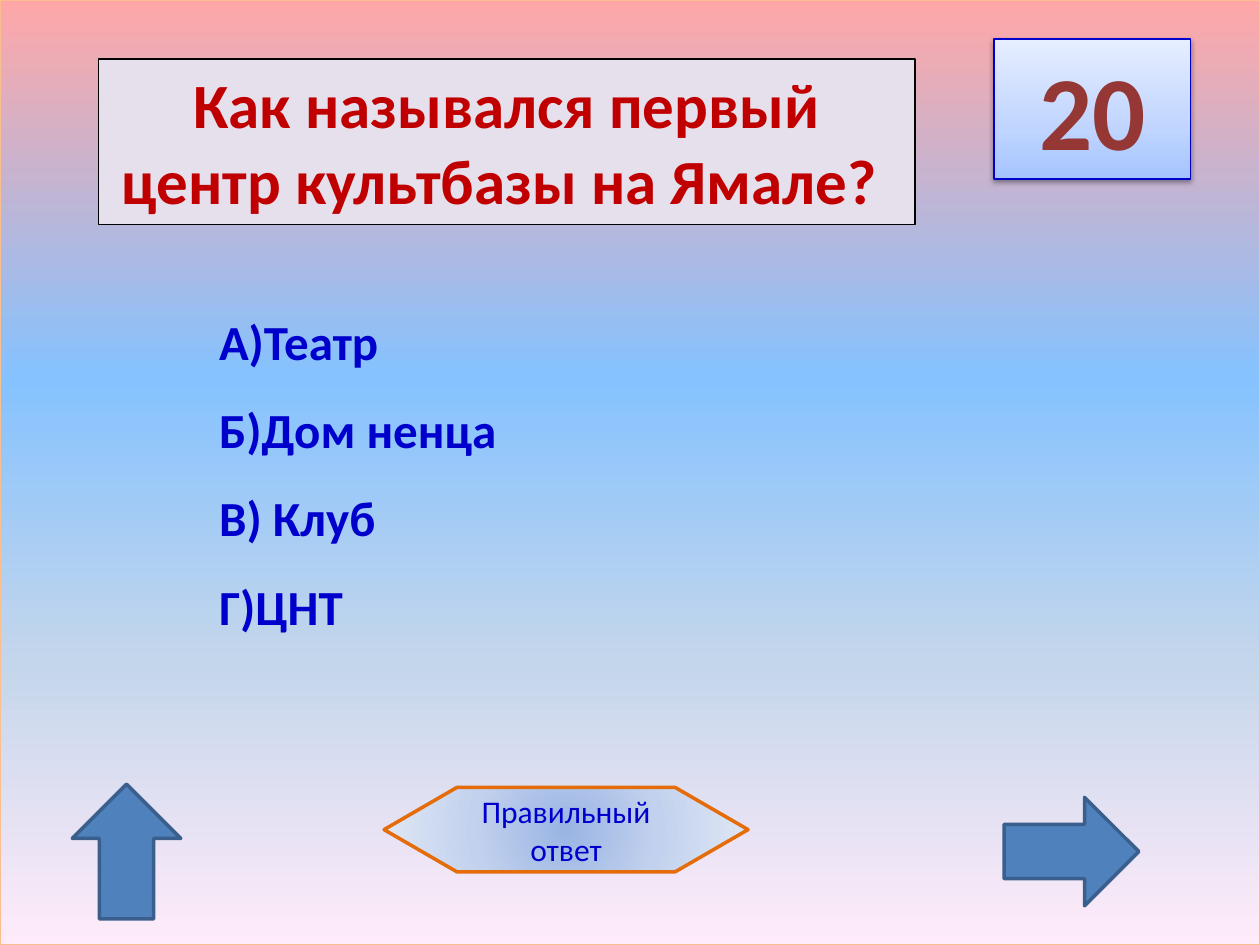
"""Build a quiz slide with a question, four answers and navigation shapes."""
from dataclasses import dataclass
from typing import NamedTuple, Optional

from pptx import Presentation
from pptx.dml.color import RGBColor
from pptx.enum.shapes import MSO_SHAPE
from pptx.enum.text import MSO_ANCHOR, MSO_AUTO_SIZE, PP_ALIGN
from pptx.oxml import parse_xml
from pptx.oxml.ns import nsdecls, qn
from pptx.util import Pt

RECT = MSO_SHAPE.RECTANGLE
ARROW = MSO_SHAPE.RIGHT_ARROW
PREP = MSO_SHAPE.FLOWCHART_PREPARATION
TOP, MIDDLE = MSO_ANCHOR.TOP, MSO_ANCHOR.MIDDLE
LEFT, CENTER = PP_ALIGN.LEFT, PP_ALIGN.CENTER
FIT, FIXED = MSO_AUTO_SIZE.SHAPE_TO_FIT_TEXT, MSO_AUTO_SIZE.NONE
NS = nsdecls("a")


class Box(NamedTuple):
    x: float
    y: float
    w: float
    h: float


class Grad(NamedTuple):
    stops: tuple
    angle: Optional[int] = None


class Shade(NamedTuple):
    color: str
    alpha: int
    blur: float
    dist: float
    angle: int


@dataclass(frozen=True)
class Theme:
    font: str = "Calibri"
    blue: str = "0000CC"
    red: str = "C00000"
    brown: str = "953735"
    violet: str = "5E457C"
    black: str = "000000"
    lilac: str = "E6E0EC"
    arrow: str = "4F81BD"
    edge: str = "3A5F8C"
    orange: str = "E46C0A"
    peach: str = "FABF8F"
    score: int = 60
    title: int = 36
    body: int = 28
    label: int = 18
    sky: tuple = ((40, "85C2FF"), (70, "C4D6EB"), (100, "FFEBFA"))
    badge: Grad = Grad(((0, "A4C4FF"), (35, "BFD4FF"), (100, "E6EEFF")), 270)
    glow: Grad = Grad(((0, "9AB5E4"), (50, "C2D1ED"), (100, "E1E8F5")))


@dataclass(frozen=True)
class Item:
    kind: int
    box: Box
    fill: object
    line: str
    width: float
    turn: int = 0
    shade: Optional[Shade] = None


@dataclass(frozen=True)
class Style:
    size: int
    color: str
    bold: bool = True
    align: int = CENTER
    anchor: int = TOP
    fit: int = FIT
    wrap: bool = True
    space: float = 1.0


THEME = Theme()


def blend(fill, root, grad: Grad) -> None:
    """Give a fill all the stops of a gradient."""
    fill.gradient()
    node = root.find(".//" + qn("a:gradFill"))
    node.clear()
    stops = "".join(f'<a:gs pos="{pos * 1000}"><a:srgbClr val="{color}"/></a:gs>'
                    for pos, color in grad.stops)
    node.append(parse_xml(f"<a:gsLst {NS}>{stops}</a:gsLst>"))
    if grad.angle is None:
        node.append(parse_xml(
            f'<a:path {NS} path="circle"><a:fillToRect l="50000" t="50000" '
            'r="50000" b="50000"/></a:path>'))
    else:
        node.append(parse_xml(f'<a:lin {NS} ang="{grad.angle * 60000}" scaled="0"/>'))


def place(shape, box: Box) -> None:
    """Move and size a shape."""
    shape.left, shape.top, shape.width, shape.height = map(Pt, box)


def paint(shape, fill, line: str, width: float) -> None:
    """Set the fill and outline of a shape."""
    if isinstance(fill, Grad):
        blend(shape.fill, shape.element.spPr, fill)
    else:
        shape.fill.solid()
        shape.fill.fore_color.rgb = RGBColor.from_string(fill)
    shape.line.color.rgb = RGBColor.from_string(line)
    shape.line.width = Pt(width)


def draw(slide, item: Item):
    """Add one preset shape."""
    shape = slide.shapes.add_shape(item.kind, *map(Pt, item.box))
    shape.rotation = item.turn
    shape.shadow.inherit = False
    paint(shape, item.fill, item.line, item.width)
    if item.shade:
        shade = item.shade
        shape.element.spPr.find(qn("a:effectLst")).append(parse_xml(
            f'<a:outerShdw {NS} blurRad="{Pt(shade.blur)}" dist="{Pt(shade.dist)}" '
            f'dir="{shade.angle * 60000}" rotWithShape="0">'
            f'<a:srgbClr val="{shade.color}"><a:alpha val="{shade.alpha * 1000}"/>'
            '</a:srgbClr></a:outerShdw>'))
    return shape


def write(shape, lines: tuple, style: Style) -> None:
    """Write one paragraph per line in a given style."""
    frame = shape.text_frame
    frame.word_wrap = style.wrap
    frame.auto_size = style.fit
    frame.vertical_anchor = style.anchor
    for index, line in enumerate(lines):
        para = frame.add_paragraph() if index else frame.paragraphs[0]
        para.alignment = style.align
        para.line_spacing = style.space
        para.space_before = Pt(0)
        run = para.add_run()
        run.text = line
        run.font.name = THEME.font
        run.font.size = Pt(style.size)
        run.font.bold = style.bold
        run.font.color.rgb = RGBColor.from_string(style.color)


def main() -> None:
    """Build and save the slide."""
    deck = Presentation()
    deck.slide_width, deck.slide_height = Pt(720), Pt(540)
    slide = deck.slides.add_slide(deck.slide_layouts[1])
    title, body = slide.placeholders
    blend(slide.background.fill, slide.element,
          Grad(((0, "FFB7B7"), *THEME.sky), 90))

    sky = draw(slide, Item(RECT, Box(0, 0, 720, 540),
                           Grad(((0, "FFA7A7"), *THEME.sky), 90), THEME.peach, 1,
                           shade=Shade("974706", 50, 0, 2.2, 63)))
    sky.element.getparent().insert(2, sky.element)

    badge = draw(slide, Item(RECT, Box(568, 22.4, 112.4, 80), THEME.badge,
                             THEME.blue, 0.75, shade=Shade(THEME.black, 38, 3.1, 1.6, 90)))
    write(badge, ("20",), Style(THEME.score, THEME.brown))
    props = badge.text_frame.paragraphs[0].runs[0].font
    props.fill.solid()
    props.color.rgb = RGBColor.from_string(THEME.brown)
    badge.element.find(".//" + qn("a:rPr")).insert(0, parse_xml(
        f'<a:ln {NS} w="{Pt(0.71)}"><a:solidFill><a:srgbClr val="{THEME.violet}"/>'
        '</a:solidFill></a:ln>'))

    for left, turn in ((33.8, 270), (573.8, 0)):
        draw(slide, Item(ARROW, Box(left, 455.6, 77, 62), THEME.arrow,
                         THEME.edge, 2, turn))

    reply = draw(slide, Item(PREP, Box(219.5, 450, 208, 48.2), THEME.glow,
                             THEME.orange, 2))
    write(reply, ("Правильный", "ответ"),
          Style(THEME.label, THEME.blue, bold=False, anchor=MIDDLE, fit=FIXED))

    place(body, Box(118, 157.5, 175, 232.5))
    write(body, ("А)Театр", "Б)Дом ненца", "В) Клуб", "Г)ЦНТ"),
          Style(THEME.body, THEME.blue, align=LEFT, wrap=False, space=1.5))
    for node in body.element.iter(qn("a:pPr")):
        node.set("marL", "0")
        node.set("indent", "0")
        node.append(parse_xml(f"<a:buNone {NS}/>"))

    place(title, Box(56.2, 33.8, 466.6, 94.4))
    paint(title, THEME.lilac, THEME.black, 0.75)
    write(title, ("Как назывался первый центр культбазы на Ямале? ",),
          Style(THEME.title, THEME.red))

    deck.save("out.pptx")


if __name__ == "__main__":
    main()
